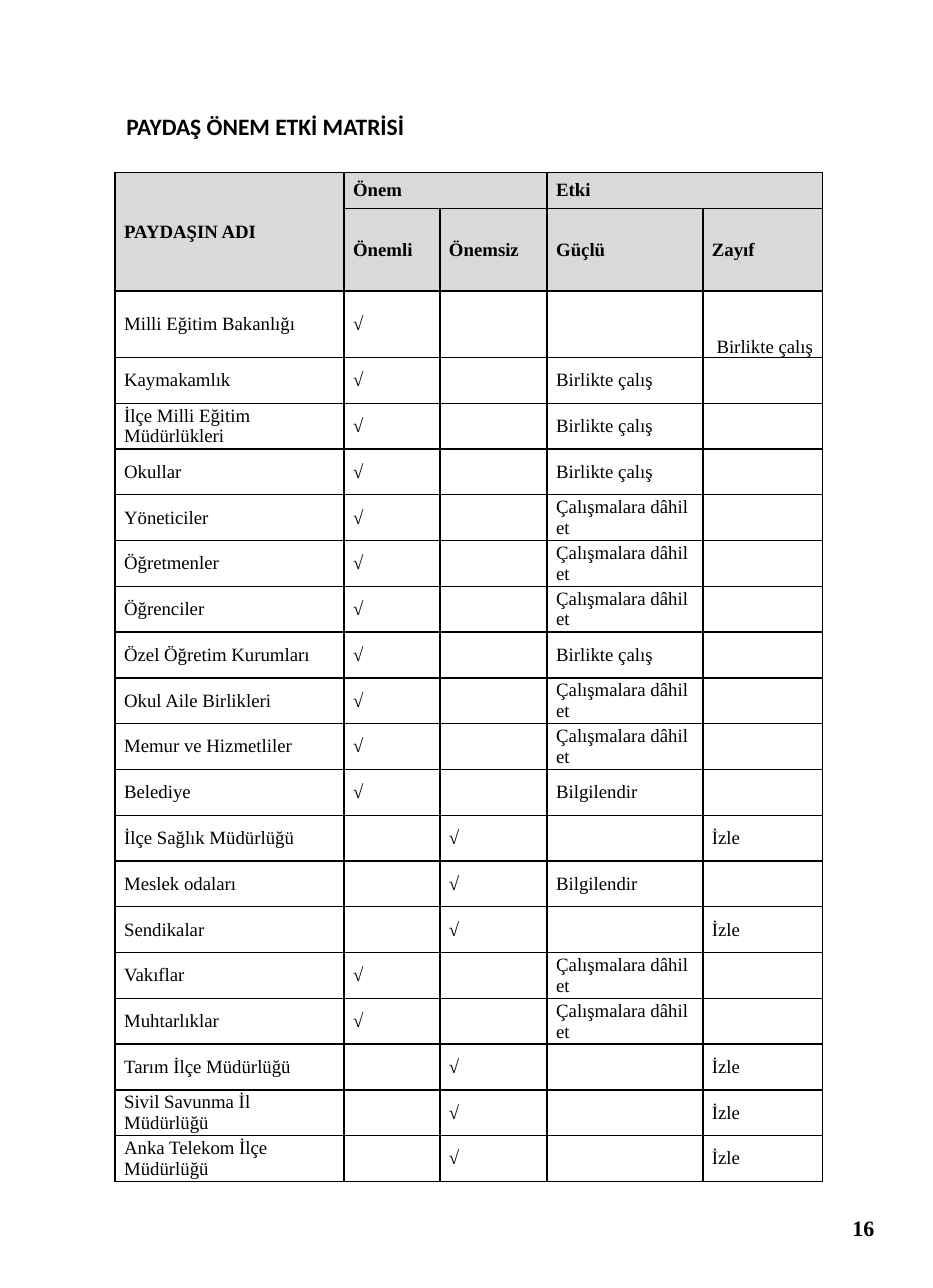
from dataclasses import dataclass

from lxml import etree
from pptx import Presentation
from pptx.dml.color import RGBColor
from pptx.enum.text import MSO_ANCHOR, MSO_AUTO_SIZE, PP_ALIGN
from pptx.oxml.ns import qn
from pptx.util import Inches, Pt

TOP, MIDDLE, BOTTOM = MSO_ANCHOR.TOP, MSO_ANCHOR.MIDDLE, MSO_ANCHOR.BOTTOM
LEFT, RIGHT = PP_ALIGN.LEFT, PP_ALIGN.RIGHT
FIXED = MSO_AUTO_SIZE.NONE


@dataclass(frozen=True)
class Theme:
    ink: str = "000000"
    head: str = "D9D9D9"
    body: str = "FFFFFF"
    serif: str = "Times New Roman"
    sans: str = "Calibri"
    title: int = 15
    cell: int = 12
    page: int = 14
    line: int = 1


THEME = Theme()

# Content
TITLE = "PAYDAŞ ÖNEM ETKİ MATRİSİ"
PAGE = "16"
TICK = "√"
JOIN = "Birlikte çalış"
ADD = "Çalışmalara dâhil et"
TELL = "Bilgilendir"
WATCH = "İzle"

HEADS = [
    ("PAYDAŞIN ADI", "Önem", "", "Etki", ""),
    ("", "Önemli", "Önemsiz", "Güçlü", "Zayıf"),
]
# Name, important, strong effect, weak effect
PARTIES = [
    ("Milli Eğitim Bakanlığı", True, "", " " + JOIN),
    ("Kaymakamlık", True, JOIN, ""),
    ("İlçe Milli Eğitim Müdürlükleri", True, JOIN, ""),
    ("Okullar", True, JOIN, ""),
    ("Yöneticiler", True, ADD, ""),
    ("Öğretmenler", True, ADD, ""),
    ("Öğrenciler", True, ADD, ""),
    ("Özel Öğretim Kurumları", True, JOIN, ""),
    ("Okul Aile Birlikleri", True, ADD, ""),
    ("Memur ve Hizmetliler", True, ADD, ""),
    ("Belediye", True, TELL, ""),
    ("İlçe Sağlık Müdürlüğü", False, "", WATCH),
    ("Meslek odaları", False, TELL, ""),
    ("Sendikalar", False, "", WATCH),
    ("Vakıflar", True, ADD, ""),
    ("Muhtarlıklar", True, ADD, ""),
    ("Tarım İlçe Müdürlüğü", False, "", WATCH),
    ("Sivil Savunma İl Müdürlüğü", False, "", WATCH),
    ("Anka Telekom İlçe Müdürlüğü", False, "", WATCH),
]
SPANS = [((0, 0), (1, 0)), ((0, 1), (0, 2)), ((0, 3), (0, 4))]

# Layout
X, Y, HIGH = 1.02, 1.53, 8.95
COLS = [2.03, 0.85, 0.95, 1.38, 1.06]
TALL = [0.32, 0.73, 0.59]
PAD = 0.08


def style(para, face, size, bold=False, align=LEFT):
    para.alignment = align
    font = para.font
    font.name, font.size, font.bold = face, Pt(size), bold
    font.color.rgb = RGBColor.from_string(THEME.ink)


def border(cell):
    props = cell._tc.get_or_add_tcPr()
    for i, side in enumerate(("lnL", "lnR", "lnT", "lnB")):
        line = etree.Element(qn("a:" + side), w=str(Pt(THEME.line)))
        fill = etree.SubElement(line, qn("a:solidFill"))
        etree.SubElement(fill, qn("a:srgbClr"), val=THEME.ink)
        props.insert(i, line)


def fill_cell(cell, text, head):
    cell.text = text
    cell.vertical_anchor = MIDDLE
    cell.margin_left = cell.margin_right = Inches(PAD)
    cell.margin_top = cell.margin_bottom = 0
    cell.fill.solid()
    cell.fill.fore_color.rgb = RGBColor.from_string(
        THEME.head if head else THEME.body)
    style(cell.text_frame.paragraphs[0], THEME.serif, THEME.cell, head)
    border(cell)


def add_matrix(slide):
    rows = HEADS + [
        (name, TICK if key else "", "" if key else TICK, strong, weak)
        for name, key, strong, weak in PARTIES
    ]
    rest = len(rows) - len(TALL)
    highs = TALL + [(HIGH - sum(TALL)) / rest] * rest
    table = slide.shapes.add_table(
        len(rows), len(COLS), Inches(X), Inches(Y),
        Inches(sum(COLS)), Inches(HIGH)).table
    table.horz_banding = False
    for col, wide in zip(table.columns, COLS):
        col.width = Inches(wide)
    for r, (row, high) in enumerate(zip(rows, highs)):
        table.rows[r].height = Inches(high)
        for c, text in enumerate(row):
            fill_cell(table.cell(r, c), text, r < len(HEADS))
    for first, last in SPANS:
        table.cell(*first).merge(table.cell(*last))
    # The first weak entry sits at the foot of its row
    table.cell(len(HEADS), len(COLS) - 1).vertical_anchor = BOTTOM


def main():
    deck = Presentation()
    deck.slide_width, deck.slide_height = Inches(8.27), Inches(11.42)
    slide = deck.slides.add_slide(deck.slide_layouts[5])

    # Title
    title = slide.shapes.title
    title.left, title.top = Inches(X), Inches(0.94)
    title.width, title.height = Inches(6.52), Inches(0.36)
    frame = title.text_frame
    frame.text = TITLE
    frame.auto_size = FIXED
    frame.vertical_anchor = TOP
    style(frame.paragraphs[0], THEME.sans, THEME.title, True)

    # Stakeholder table
    add_matrix(slide)

    # Page number
    box = slide.shapes.add_textbox(
        Inches(5.93), Inches(10.58), Inches(1.93), Inches(0.61))
    frame = box.text_frame
    frame.text = PAGE
    frame.word_wrap = True
    frame.vertical_anchor = MIDDLE
    frame.margin_left = frame.margin_right = Inches(0.11)
    style(frame.paragraphs[0], THEME.serif, THEME.page, True, RIGHT)

    deck.save("out.pptx")


if __name__ == "__main__":
    main()
